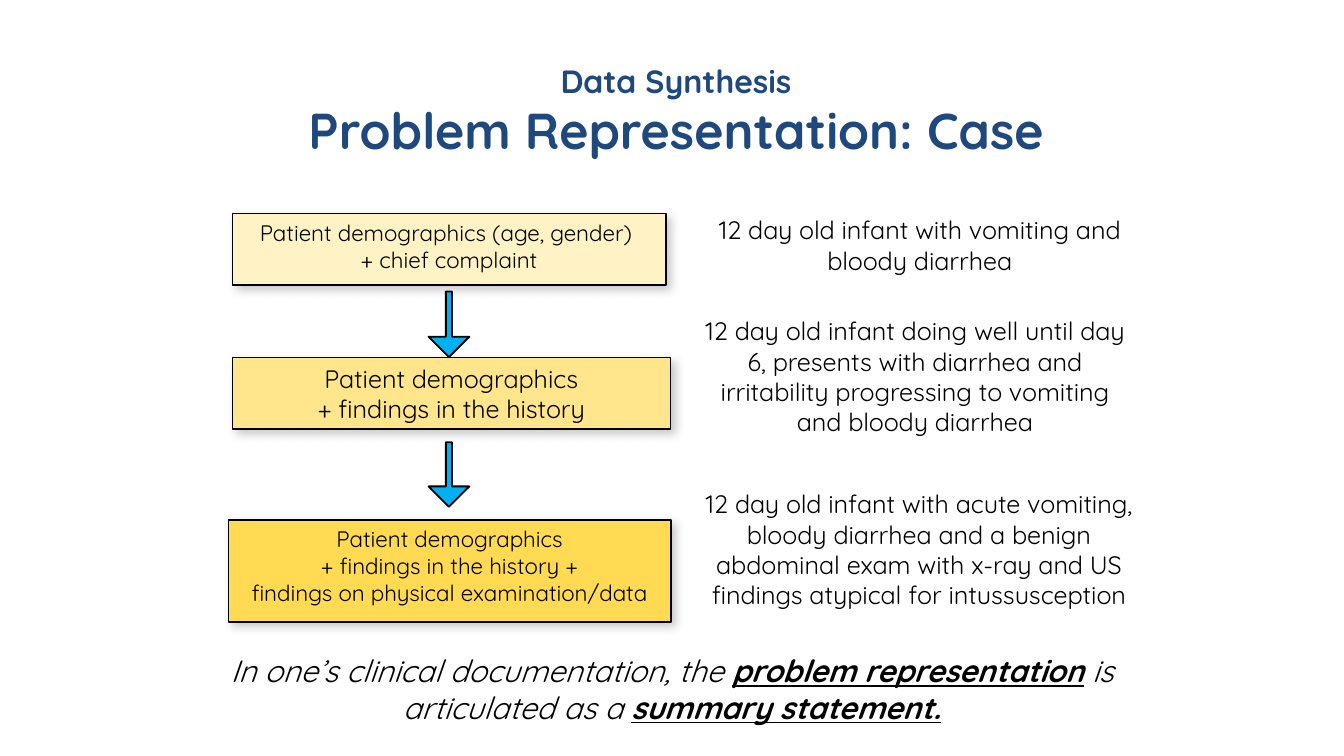
from typing import NamedTuple

from lxml.etree import SubElement
from pptx import Presentation
from pptx.dml.color import RGBColor
from pptx.enum.shapes import MSO_SHAPE
from pptx.enum.text import MSO_ANCHOR, PP_ALIGN
from pptx.oxml.ns import qn
from pptx.util import Cm, Pt

FONT = "Quicksand"
BLACK = RGBColor(0x00, 0x00, 0x00)
NAVY = RGBColor(0x1F, 0x49, 0x7D)
SKY = RGBColor(0x00, 0xB0, 0xF0)
CREAM = RGBColor(0xFF, 0xF3, 0xC5)
YELLOW = RGBColor(0xFF, 0xE6, 0x8C)
GOLD = RGBColor(0xFF, 0xDA, 0x52)


class Area(NamedTuple):
    left: float
    top: float
    width: float
    height: float

    def lengths(self) -> list:
        return [Cm(value) for value in self]


class Step(NamedTuple):
    area: Area
    fill: RGBColor
    size: float
    lines: list[str]


class Example(NamedTuple):
    area: Area
    text: str


class Span(NamedTuple):
    text: str
    bold: bool = False
    underline: bool = False


STEPS = [
    Step(Area(4.39, 4.04, 8.2, 1.35), CREAM, 12,
         ["Patient demographics (age, gender) ", "+ chief complaint"]),
    Step(Area(4.39, 6.76, 8.28, 1.35), YELLOW, 13.5,
         ["Patient demographics", "+ findings in the history"]),
    Step(Area(4.32, 9.83, 8.36, 1.93), GOLD, 12,
         ["Patient demographics", "+ findings in the history +",
          "findings on physical examination/data"]),
]
ARROWS = [Area(8.1, 5.51, 0.77, 1.24), Area(8.1, 8.36, 0.77, 1.22)]
EXAMPLES = [
    Example(Area(13.18, 3.96, 8.41, 1.35),
            "12 day old infant with vomiting and bloody diarrhea"),
    Example(Area(13, 5.87, 8.59, 3.07),
            "12 day old infant doing well until day 6, presents with diarrhea and "
            "irritability progressing to vomiting and bloody diarrhea"),
    Example(Area(13, 9.14, 8.74, 3.07),
            "12 day old infant with acute vomiting, bloody diarrhea and a benign "
            "abdominal exam with x-ray and US findings atypical for intussusception"),
]
SUMMARY = [
    Span("In one’s clinical documentation, the "),
    Span("problem representation", True, True),
    Span(" ", True),
    Span("is articulated as a "),
    Span("summary statement.", True, True),
]


def prepare_frame(shape, anchor=MSO_ANCHOR.TOP):
    """Set wrapping, insets and anchor of a text frame."""
    frame = shape.text_frame
    frame.word_wrap = True
    frame.vertical_anchor = anchor
    frame.margin_left = frame.margin_right = Cm(0.19)
    frame.margin_top = frame.margin_bottom = Cm(0.1)
    return frame


def style_paragraph(para, size: float, color: RGBColor = BLACK) -> None:
    """Centre a paragraph and set its font."""
    para.alignment = PP_ALIGN.CENTER
    para.font.name = FONT
    para.font.size = Pt(size)
    para.font.color.rgb = color


def add_outlined(page, kind, area: Area, fill: RGBColor, weight: float):
    """Add a filled preset shape with a black outline."""
    shape = page.shapes.add_shape(kind, *area.lengths())
    shape.shadow.inherit = False
    shape.fill.solid()
    shape.fill.fore_color.rgb = fill
    shape.line.color.rgb = BLACK
    shape.line.width = Pt(weight)
    return shape


def add_shadow(shape) -> None:
    """Give a shape a soft grey shadow to the lower right."""
    effects = shape._element.spPr.find(qn("a:effectLst"))
    shadow = SubElement(effects, qn("a:outerShdw"), blurRad=str(Pt(5)),
                        dist=str(Pt(3)), dir="2700000", algn="tl", rotWithShape="0")
    color = SubElement(shadow, qn("a:srgbClr"), val="808080")
    SubElement(color, qn("a:alpha"), val="42000")


def add_step(page, step: Step) -> None:
    """Draw one box of the flow."""
    box = add_outlined(page, MSO_SHAPE.RECTANGLE, step.area, step.fill, 0.75)
    add_shadow(box)
    frame = prepare_frame(box)
    frame.text = "\n".join(step.lines)
    for para in frame.paragraphs:
        style_paragraph(para, step.size)


def add_arrow(page, area: Area) -> None:
    """Draw one down arrow between boxes."""
    arrow = add_outlined(page, MSO_SHAPE.DOWN_ARROW, area, SKY, 1)
    arrow.adjustments[0] = 0.15
    arrow.adjustments[1] = 0.5


def add_example(page, example: Example) -> None:
    """Write the case text beside a box."""
    frame = prepare_frame(page.shapes.add_textbox(*example.area.lengths()))
    frame.text = example.text
    style_paragraph(frame.paragraphs[0], 13.5)


def add_summary(page, area: Area, spans: list[Span]) -> None:
    """Write the italic closing sentence."""
    frame = prepare_frame(page.shapes.add_textbox(*area.lengths()))
    para = frame.paragraphs[0]
    style_paragraph(para, 16.5)
    para.font.italic = True
    for span in spans:
        run = para.add_run()
        run.text = span.text
        run.font.bold = span.bold
        run.font.underline = span.underline


def add_title(page, area: Area) -> None:
    """Write the two-line heading."""
    frame = prepare_frame(page.shapes.add_textbox(*area.lengths()), MSO_ANCHOR.MIDDLE)
    frame.text = "Data Synthesis\nProblem Representation: Case"
    for para, size in zip(frame.paragraphs, (17.2, 27)):
        style_paragraph(para, size, NAVY)
        para.font.bold = True


def main() -> None:
    """Build and save the slide."""
    deck = Presentation()
    deck.slide_width, deck.slide_height = Cm(25.4), Cm(14.29)
    page = deck.slides.add_slide(deck.slide_layouts[6])
    for step in STEPS:
        add_step(page, step)
    for area in ARROWS:
        add_arrow(page, area)
    for example in EXAMPLES:
        add_example(page, example)
    add_summary(page, Area(3.96, 12.22, 17.48, 1.6), SUMMARY)
    add_title(page, Area(3.81, 0.97, 17.93, 2.24))
    deck.save("out.pptx")


if __name__ == "__main__":
    main()
